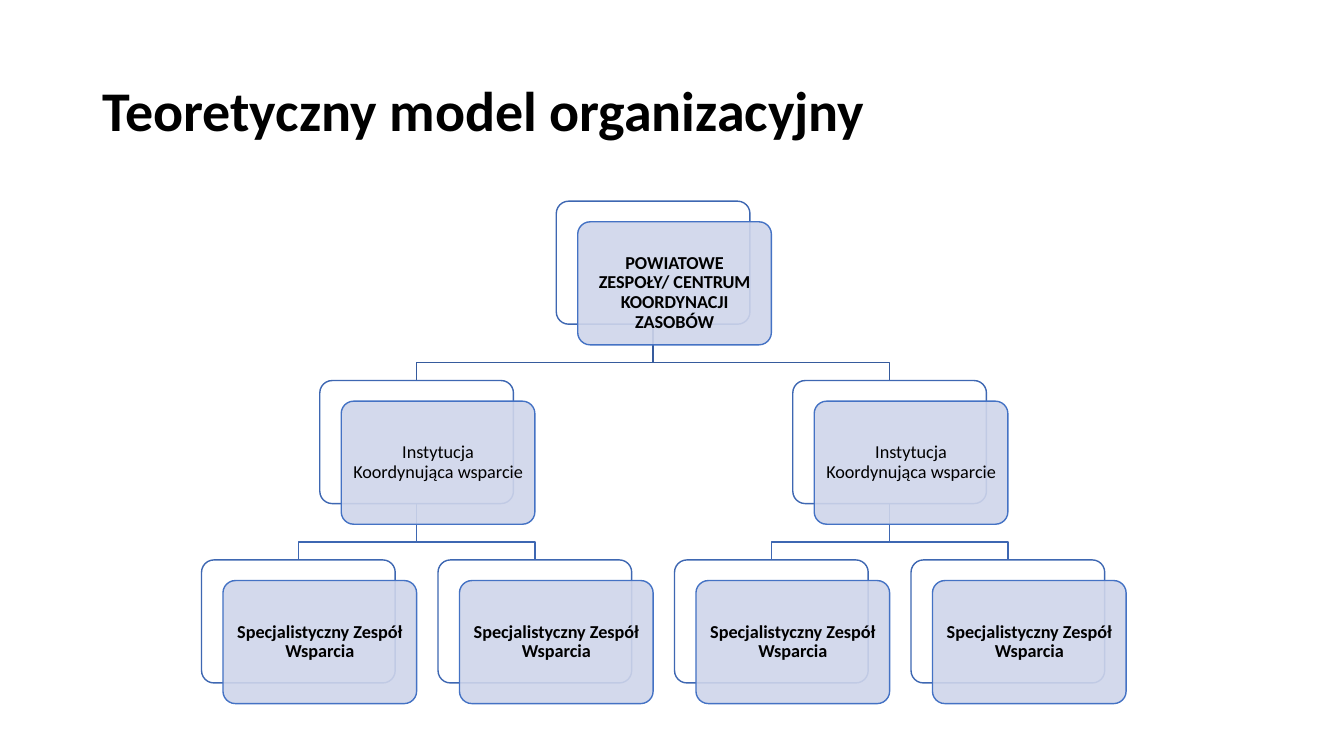
from lxml import etree
from pptx import Presentation
from pptx.dml.color import RGBColor
from pptx.enum.shapes import MSO_SHAPE
from pptx.enum.text import MSO_ANCHOR, PP_ALIGN
from pptx.oxml.ns import qn
from pptx.util import Cm, Pt

ROUNDED = MSO_SHAPE.ROUNDED_RECTANGLE
MIDDLE = MSO_ANCHOR.MIDDLE
LEFT, CENTER = PP_ALIGN.LEFT, PP_ALIGN.CENTER
TITLE_ONLY = 5

# Lengths in centimetres
CHART_LEFT, CHART_TOP = 5.08, 5.07
COLUMN_STEP, ROW_STEP = 5.96, 4.52
CARD_WIDTH, CARD_HEIGHT = 4.88, 3.1
FRONT_RIGHT, FRONT_DOWN = 0.54, 0.52
ELBOW_DROP = 0.97
INSET = 0.21
ROOT_TOP_INSET = 0.68

TEAM = "Specjalistyczny Zespół Wsparcia"
INSTITUTION = "Instytucja Koordynująca wsparcie"
CENTRE = "POWIATOWE ZESPOŁY/ CENTRUM KOORDYNACJI ZASOBÓW"

# Levels from the top: text, bold, top inset, columns, colour of links below
LEVELS = [
    (CENTRE, True, ROOT_TOP_INSET, [1.5], "365B9D"),
    (INSTITUTION, False, INSET, [0.5, 2.5], "3E67B2"),
    (TEAM, True, INSET, [0, 1, 2, 3], None),
]


def color(hex_string):
    return RGBColor.from_string(hex_string)


def write(frame, text, size, bold=False, align=LEFT):
    frame.word_wrap = True
    frame.vertical_anchor = MIDDLE
    paragraph = frame.paragraphs[0]
    paragraph.alignment = align
    paragraph.line_spacing = 0.9
    run = paragraph.add_run()
    run.text = text
    run.font.name = "Calibri"
    run.font.size = Pt(size)
    run.font.bold = bold
    run.font.color.rgb = color("000000")


def card_corner(column, row):
    return CHART_LEFT + column * COLUMN_STEP, CHART_TOP + row * ROW_STEP


class OrganisationSlide:
    line_width = Pt(1)
    back_line = "3E67B2"
    front_line = "4472C4"
    front_fill = "CFD5EA"

    def __init__(self, presentation):
        self.slide = presentation.slides.add_slide(
            presentation.slide_layouts[TITLE_ONLY])

    def title(self, text):
        shape = self.slide.shapes.title
        shape.left, shape.top = Cm(2.33), Cm(1.01)
        shape.width, shape.height = Cm(29.21), Cm(3.68)
        write(shape.text_frame, text, size=40, bold=True)

    def outline(self, shape, line):
        shape.shadow.inherit = False
        shape.line.color.rgb = color(line)
        shape.line.width = self.line_width

    def rounded_box(self, left, top, fill, line, opacity=100):
        shape = self.slide.shapes.add_shape(
            ROUNDED, Cm(left), Cm(top), Cm(CARD_WIDTH), Cm(CARD_HEIGHT))
        shape.adjustments[0] = 0.1
        shape.fill.solid()
        shape.fill.fore_color.rgb = color(fill)
        self.outline(shape, line)
        if opacity < 100:
            fill_color = shape._element.spPr.find(
                qn("a:solidFill") + "/" + qn("a:srgbClr"))
            etree.SubElement(fill_color, qn("a:alpha"),
                             val=str(opacity * 1000))
        return shape

    def card(self, column, row, text, bold, top_inset):
        left, top = card_corner(column, row)
        self.rounded_box(left, top, "FFFFFF", self.back_line)
        front = self.rounded_box(left + FRONT_RIGHT, top + FRONT_DOWN,
                                 self.front_fill, self.front_line, opacity=90)
        frame = front.text_frame
        frame.margin_left = frame.margin_right = Cm(INSET)
        frame.margin_top, frame.margin_bottom = Cm(top_inset), Cm(INSET)
        write(frame, text, size=13, bold=bold, align=CENTER)

    def link(self, parent_column, child_column, row, line):
        """Draw a stepped line from a card to one in the row below."""
        parent_left, parent_top = card_corner(parent_column, row)
        child_left, child_top = card_corner(child_column, row + 1)
        start_x = Cm(parent_left + CARD_WIDTH / 2)
        end_x = Cm(child_left + CARD_WIDTH / 2)
        start_y = Cm(parent_top + CARD_HEIGHT)
        elbow_y = start_y + Cm(ELBOW_DROP)
        builder = self.slide.shapes.build_freeform(start_x, start_y)
        builder.add_line_segments(
            [(start_x, elbow_y), (end_x, elbow_y), (end_x, Cm(child_top))],
            close=False)
        shape = builder.convert_to_shape()
        shape.fill.background()
        self.outline(shape, line)


def main():
    presentation = Presentation()
    presentation.slide_width, presentation.slide_height = Cm(33.87), Cm(19.05)
    page = OrganisationSlide(presentation)
    page.title("Teoretyczny model organizacyjny")

    for row, (*_, columns, line) in enumerate(LEVELS[:-1]):
        children = LEVELS[row + 1][3]
        for index, child in enumerate(children):
            page.link(columns[index // 2], child, row, line)

    for row, (text, bold, top_inset, columns, _) in enumerate(LEVELS):
        for column in columns:
            page.card(column, row, text, bold, top_inset)

    presentation.save("out.pptx")


if __name__ == "__main__":
    main()
